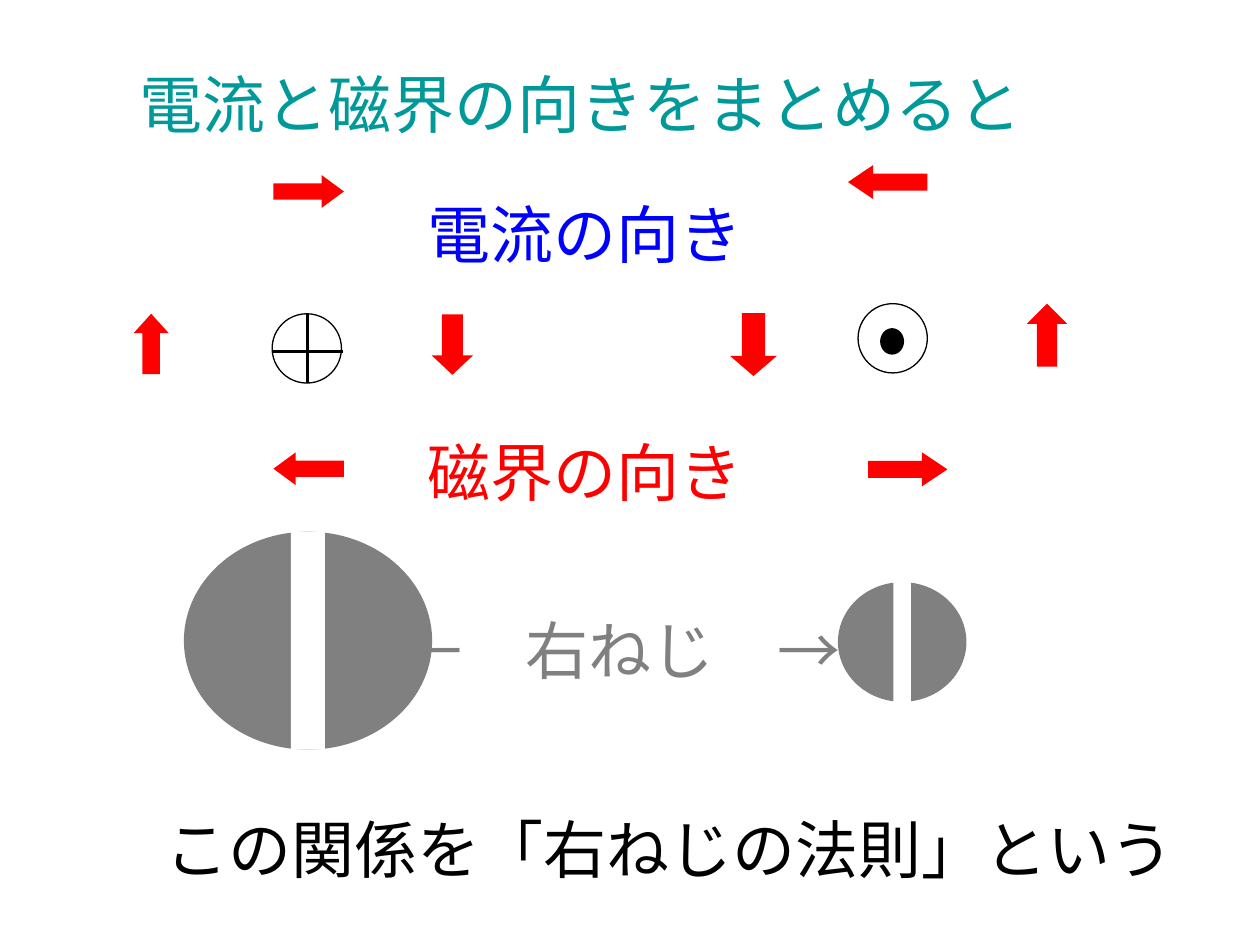
from lxml import etree
from pptx import Presentation
from pptx.dml.color import RGBColor
from pptx.enum import shapes, text
from pptx.oxml.ns import qn
from pptx.util import Inches, Pt

FONT = "Noto Sans CJK JP"
RED, GRAY, BLACK, WHITE = "FF0000", "808080", "000000", "FFFFFF"
OVAL = shapes.MSO_SHAPE.OVAL
BAR = shapes.MSO_SHAPE.RECTANGLE

# Content: wording, colour, frame (left, top, width, height)
TITLE = ("電流と磁界の向きをまとめると", "009999", (0.83, 0.52, 7.56, 0.55))
LABELS = [
    ("電流の向き", "0000FF", (3.43, 1.55, 2.43, 0.5)),
    ("磁界の向き", RED, (3.43, 3.44, 2.43, 0.5)),
    ("この関係を「右ねじの法則」という", BLACK, (1.93, 6.43, 6.77, 0.47)),
    ("←　右ねじ　→", GRAY, (3.66, 4.85, 2.52, 0.55)),
]
# Field arrows around each current: frame, rotation, head length
FIELDS = [
    [((3.35, 2.57, 0.48, 0.33), 90, 0.47),
     ((2.17, 3.59, 0.56, 0.26), 180, 0.68),
     ((0.96, 2.59, 0.48, 0.28), 270, 0.55),
     ((2.17, 1.39, 0.56, 0.26), 0, 0.68)],
    [((5.73, 2.55, 0.5, 0.37), 90, 0.43),
     ((8.06, 2.5, 0.5, 0.32), 270, 0.5),
     ((6.73, 1.31, 0.63, 0.27), 180, 0.74),
     ((6.89, 3.59, 0.63, 0.27), 0, 0.75)],
]
# Screw heads: frame, slot width
SCREWS = [((1.46, 4.22, 1.97, 1.73), 0.27), ((6.65, 4.62, 1.02, 0.95), 0.14)]
CURRENT_IN = (2.16, 2.49, 0.55, 0.55)
CROSS = [(2.44, 2.49, 2.44, 3.04), (2.16, 2.79, 2.72, 2.79)]
CURRENT_OUT = (6.81, 2.41, 0.55, 0.55)
DOT = (6.99, 2.61, 0.18, 0.2)


def colour(value):
    return RGBColor.from_string(value)


def inches(values):
    return [Inches(value) for value in values]


def write(box, wording, ink):
    frame = box.text_frame
    frame.text = wording
    frame.word_wrap = False
    frame.auto_size = text.MSO_AUTO_SIZE.NONE
    frame.vertical_anchor = text.MSO_ANCHOR.TOP
    frame.margin_left = frame.margin_right = 0
    frame.margin_top = frame.margin_bottom = 0
    para = frame.paragraphs[0]
    para.alignment = text.PP_ALIGN.CENTER
    para.line_spacing = 1
    para.space_before = Pt(0)
    para.font.size = Pt(36)
    para.font.name = FONT
    para.font.color.rgb = colour(ink)
    # East Asian text takes its own typeface setting
    for span in para.runs:
        props = span._r.get_or_add_rPr()
        etree.SubElement(props, qn("a:ea"), typeface=FONT)


def draw(group, kind, frame, fill=None, line=None):
    shape = group.shapes.add_shape(kind, *inches(frame))
    shape.shadow.inherit = False
    if fill:
        shape.fill.solid()
        shape.fill.fore_color.rgb = colour(fill)
    else:
        shape.fill.background()
    if line:
        shape.line.color.rgb = colour(line)
        shape.line.width = Pt(0.75)
    else:
        shape.line.fill.background()
    return shape


deck = Presentation()
deck.slide_width, deck.slide_height = Inches(10), Inches(7.5)
page = deck.slides.add_slide(deck.slide_layouts[5])

# Title
title = page.shapes.title
title.left, title.top, title.width, title.height = inches(TITLE[2])
write(title, *TITLE[:2])

# Magnetic field arrows
for arrows in FIELDS:
    group = page.shapes.add_group_shape()
    for frame, turn, head in arrows:
        arrow = draw(group, shapes.MSO_SHAPE.RIGHT_ARROW, frame, RED)
        arrow.rotation = turn
        arrow.adjustments[1] = head

# Screw heads with a centred slot
for frame, slot in SCREWS:
    left, top, width, height = frame
    group = page.shapes.add_group_shape()
    draw(group, OVAL, frame, GRAY)
    draw(group, BAR, (left + (width - slot) / 2, top, slot, height), WHITE)

# Current into the page
group = page.shapes.add_group_shape()
draw(group, OVAL, CURRENT_IN, line=BLACK)
for ends in CROSS:
    stroke = group.shapes.add_connector(shapes.MSO_CONNECTOR.STRAIGHT, *inches(ends))
    stroke.line.color.rgb = colour(BLACK)
    stroke.line.width = Pt(2)
    etree.SubElement(stroke._element.spPr, qn("a:effectLst"))

# Current out of the page
group = page.shapes.add_group_shape()
draw(group, OVAL, CURRENT_OUT, line=BLACK)
draw(group, OVAL, DOT, BLACK, BLACK)

# Labels
for wording, ink, frame in LABELS:
    write(page.shapes.add_textbox(*inches(frame)), wording, ink)

deck.save("out.pptx")
